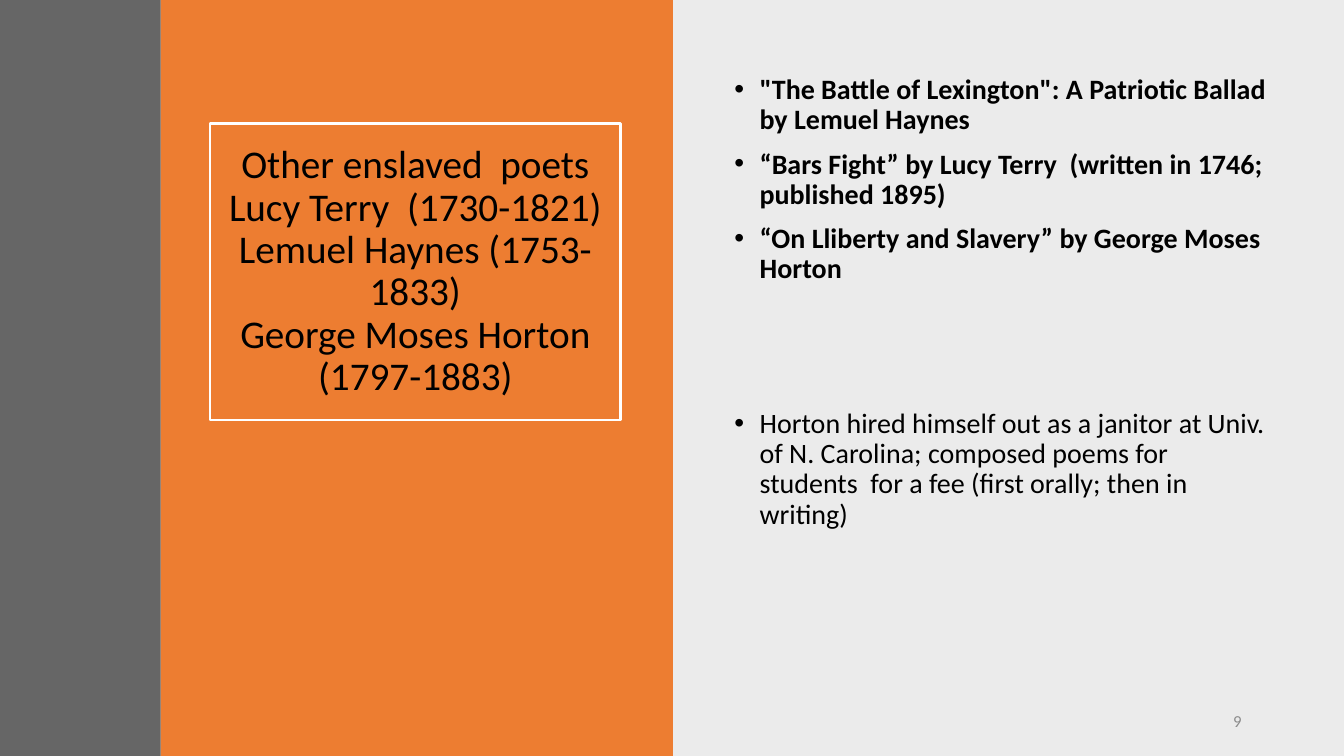
from dataclasses import dataclass

from lxml import etree
from pptx import Presentation
from pptx import util as u
from pptx.dml.color import RGBColor
from pptx.enum import shapes, text
from pptx.oxml.ns import qn

PX = 9525  # EMU in one px, at 96 px to the inch
WIDE, HIGH = 1280, 720


@dataclass(frozen=True)
class Theme:
    face: str = "Calibri"
    ink: str = "000000"
    accent: str = "ED7D31"
    strip: str = "404040"
    frame: str = "FFFFFF"
    faint: str = "8C8C8C"
    title: int = 28
    body: int = 20
    small: int = 12


def assign(target, values):
    for key, value in values.items():
        setattr(target, key, value)


class Deck:
    def __init__(self, theme):
        self.theme = theme
        self.show = Presentation()
        assign(self.show, {"slide_width": WIDE * PX, "slide_height": HIGH * PX})
        self.slide = self.show.slides.add_slide(self.show.slide_layouts[6])

    def rect(self, box, fill=None, alpha=100, line=None):
        """Add a rectangle; alpha is the opacity of its fill in percent."""
        shape = self.slide.shapes.add_shape(
            shapes.MSO_SHAPE.RECTANGLE, *(n * PX for n in box))
        shape.shadow.inherit = False
        if fill:
            shape.fill.solid()
            shape.fill.fore_color.rgb = RGBColor.from_string(fill)
            if alpha < 100:
                color = shape.element.spPr.find(qn("a:solidFill"))[0]
                etree.SubElement(color, qn("a:alpha"), val=str(alpha * 1000))
        else:
            shape.fill.background()
        if line:
            shape.line.color.rgb = RGBColor.from_string(line)
            shape.line.width = u.Pt(2)
        else:
            shape.line.fill.background()
        return shape

    def label(self, box):
        return self.slide.shapes.add_textbox(*(n * PX for n in box))

    def put(self, shape, lines, size, color=None, bold=False, anchor="TOP", **form):
        """Fill a shape with paragraphs that share one format."""
        frame = shape.text_frame
        assign(frame, {"word_wrap": True,
                       "vertical_anchor": getattr(text.MSO_ANCHOR, anchor)})
        for i, line in enumerate(lines):
            para = frame.add_paragraph() if i else frame.paragraphs[0]
            para.text = line
            assign(para, form)
            for run in para.runs:
                assign(run.font, {"name": self.theme.face, "size": u.Pt(size),
                                  "bold": bold})
                run.font.color.rgb = RGBColor.from_string(color or self.theme.ink)
        return frame

    def bullets(self, box, lines, bold=False):
        frame = self.put(self.label(box), lines, self.theme.body, bold=bold,
                         line_spacing=0.9, space_before=u.Pt(10))
        for para in frame.paragraphs:
            props = para._p.get_or_add_pPr()
            props.set("marL", str(24 * PX))
            props.set("indent", str(-24 * PX))
            etree.SubElement(props, qn("a:buFont"), typeface="Arial")
            etree.SubElement(props, qn("a:buChar"), char="•")


def main():
    theme = Theme()
    deck = Deck(theme)
    align = text.PP_ALIGN

    deck.rect((640, 0, 640, HIGH), theme.ink, alpha=8)
    deck.rect((153, 0, 488, HIGH), theme.accent)
    title = deck.rect((200, 118, 391, 282), line=theme.frame)
    poets = ("Other enslaved  poets", "Lucy Terry  (1730-1821)",
             "Lemuel Haynes (1753-1833)", "George Moses Horton (1797-1883)")
    deck.put(title, ["\v".join(poets)], theme.title, anchor="MIDDLE",
             alignment=align.CENTER, line_spacing=0.9)
    deck.rect((0, 0, 153, HIGH), theme.strip, alpha=80)

    poems = ('"The Battle of Lexington": A Patriotic Ballad by Lemuel Haynes',
             "“Bars Fight” by Lucy Terry  (written in 1746; published 1895)",
             "“On Lliberty and Slavery” by George Moses Horton")
    career = ("Horton hired himself out as a janitor at Univ. of N. Carolina; "
              "composed poems for students  for a fee "
              "(first orally; then in writing)",)
    for top, lines, bold in ((67, poems, True), (385, career, False)):
        deck.bullets((690, top, 531, 268), lines, bold)

    deck.put(deck.label((904, 667, 288, 38)), ["9"], theme.small, theme.faint,
             anchor="MIDDLE", alignment=align.RIGHT)
    deck.show.save("out.pptx")


if __name__ == "__main__":
    main()
